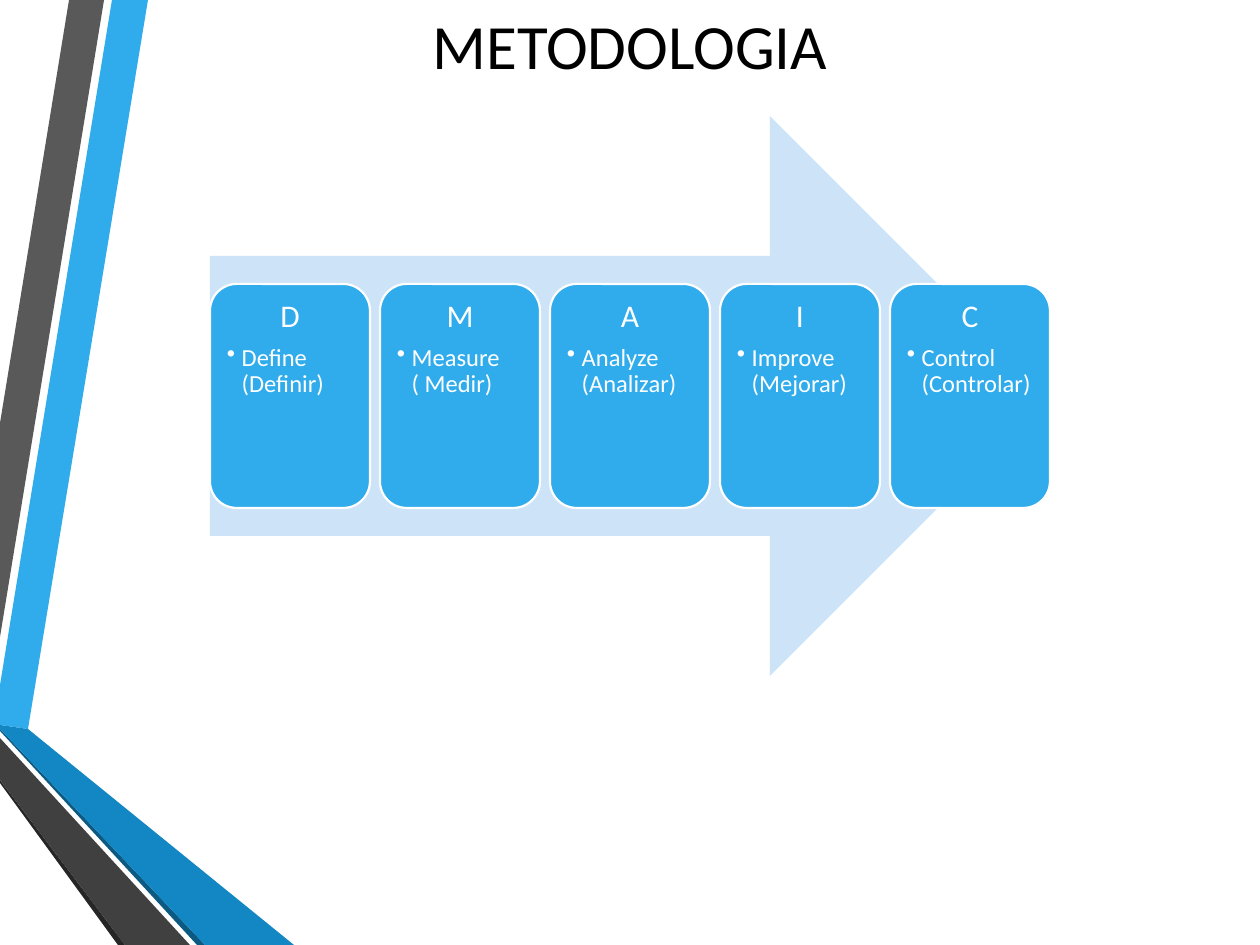
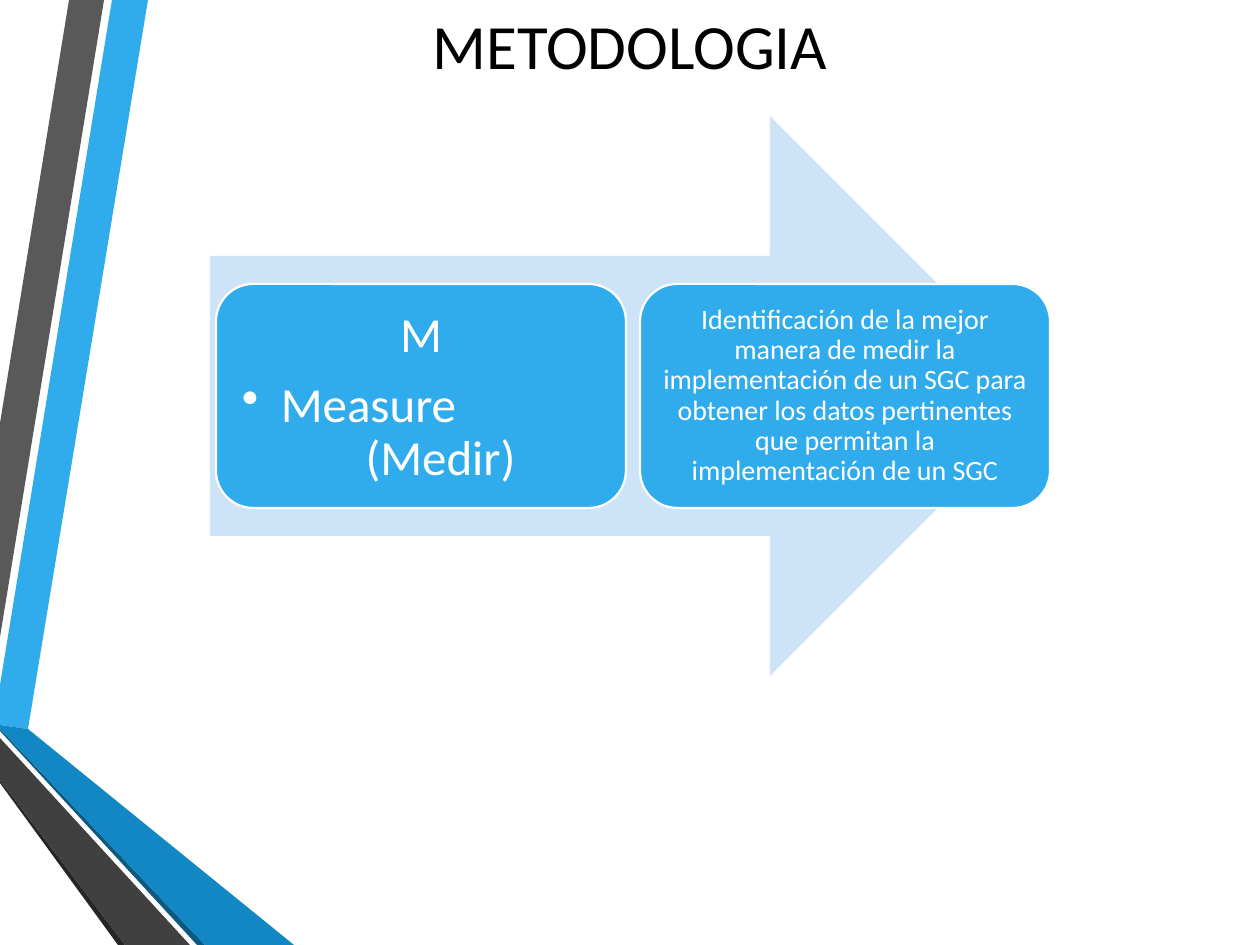
import pptx
import pptx.dml.color
import pptx.enum.shapes
import pptx.enum.text
import pptx.oxml.ns
import pptx.util
from lxml import etree

PX = pptx.util.Inches(1) / 126
FONT = "Calibri"
COLORS = {
    "black": "000000",
    "white": "FFFFFF",
    "sky": "30ACEC",
    "blue": "1287C3",
    "navy": "0C5A82",
    "gray": "595959",
    "charcoal": "404040",
    "ink": "262626",
    "pale": "CDE3F8",
}
BANDS = [
    ("sky", [(0, 685), (0, 725), (28, 729), (148, 0), (112, 0)]),
    ("gray", [(104, 0), (69, 0), (0, 423), (0, 637)]),
    ("ink", [(0, 780), (0, 783), (118, 945), (125, 945)]),
    ("navy", [(0, 729), (0, 731), (197, 945), (205, 945)]),
    ("blue", [(0, 729), (205, 945), (294, 945), (28, 729), (0, 725)]),
    ("charcoal", [(0, 780), (125, 945), (190, 945), (0, 738)]),
]
TITLE_BOX = (174, 0, 912, 89)
ARROW_BOX = (210, 116, 840, 560)
ALIGN = pptx.enum.text.PP_ALIGN
ANCHOR = pptx.enum.text.MSO_ANCHOR
SHAPE = pptx.enum.shapes.MSO_SHAPE
STEPS = [
    ("D", "Define (Definir)"),
    ("M", "Measure\v( Medir)"),
    ("A", "Analyze (Analizar)"),
    ("I", "Improve (Mejorar)"),
    ("C", "Control (Controlar)"),
]
GOAL = (
    "Identificación de la mejor manera de medir la implementación de un SGC "
    "para obtener los datos pertinentes que permitan la implementación de un SGC"
)


def emu(length):
    """Turn px into EMU."""
    return pptx.util.Emu(round(length * PX))


def rgb(name):
    """Look up a named colour."""
    return pptx.dml.color.RGBColor.from_string(COLORS[name])


def paint(shape, fill, line=None):
    """Give a shape a flat fill and an optional outline."""
    shape.shadow.inherit = False
    shape.fill.solid()
    shape.fill.fore_color.rgb = rgb(fill)
    if line:
        shape.line.color.rgb = rgb(line)
        shape.line.width = pptx.util.Pt(1.25)
    else:
        shape.line.fill.background()


def write(shape, text, size, color="white", align=ALIGN.CENTER, spacing=0.9,
          after=0, level=0, indent=0, bullet=False):
    """Add one formatted paragraph to a shape."""
    frame = shape.text_frame
    para = frame.paragraphs[0]
    if para.runs:
        para = frame.add_paragraph()
    para.text = text
    para.alignment = align
    para.level = level
    para.line_spacing = spacing
    para.space_before = pptx.util.Pt(0)
    para.space_after = pptx.util.Pt(after)
    for span in para.runs:
        span.font.name = FONT
        span.font.size = pptx.util.Pt(size)
        span.font.color.rgb = rgb(color)
    qn = pptx.oxml.ns.qn
    for line_break in para._p.findall(qn("a:br")):
        etree.SubElement(line_break, qn("a:rPr"), sz=str(size * 100))
    properties = para._p.get_or_add_pPr()
    if indent:
        properties.set("marL", str(emu(indent)))
        properties.set("indent", str(-emu(indent) if bullet else 0))
    if bullet:
        etree.SubElement(properties, qn("a:buChar"), char="•")


def draw_bands(page):
    """Draw the folded ribbons along the left edge."""
    for color, points in BANDS:
        builder = page.shapes.build_freeform(*points[0], scale=PX)
        builder.add_line_segments(points[1:], close=True)
        paint(builder.convert_to_shape(), color)


def draw_title(page, box, text):
    """Place and format the title placeholder."""
    title = page.shapes.title
    title.left, title.top, title.width, title.height = map(emu, box)
    title.text_frame.word_wrap = True
    title.text_frame.vertical_anchor = ANCHOR.TOP
    write(title, text, 36, color="black", spacing=1.0)


def draw_arrow(page, box, count, card_width, gap, inset):
    """Draw the arrow and its row of cards, flush right; return the cards."""
    left, top, width, height = box
    arrow = page.shapes.add_shape(SHAPE.RIGHT_ARROW, *map(emu, box))
    paint(arrow, "pale")
    first = left + width - count * card_width - (count - 1) * gap
    cards = []
    for index in range(count):
        card_box = (first + index * (card_width + gap), top + height * 0.3,
                    card_width, height * 0.4)
        card = page.shapes.add_shape(SHAPE.ROUNDED_RECTANGLE, *map(emu, card_box))
        paint(card, "sky", line="white")
        frame = card.text_frame
        frame.word_wrap = True
        frame.vertical_anchor = ANCHOR.TOP
        frame.margin_left = frame.margin_right = emu(inset)
        frame.margin_top = frame.margin_bottom = emu(inset)
        cards.append(card)
    return cards


def start_page(deck):
    """Add a page with the shared bands and title."""
    page = deck.slides.add_slide(deck.slide_layouts[5])
    draw_bands(page)
    draw_title(page, TITLE_BOX, "METODOLOGIA")
    return page


def build_steps(deck):
    """Build the page with the five steps."""
    page = start_page(deck)
    cards = draw_arrow(page, ARROW_BOX, len(STEPS), card_width=160, gap=10, inset=9)
    for card, (letter, term) in zip(cards, STEPS):
        write(card, letter, 18, after=6)
        write(card, term, 14, align=ALIGN.LEFT, level=1, indent=15, bullet=True)


def build_measure(deck):
    """Build the page on the measuring step."""
    page = start_page(deck)
    step, goal = draw_arrow(page, ARROW_BOX, 2, card_width=410, gap=14, inset=15)
    write(step, "M", 28, after=10)
    write(step, "Measure", 28, align=ALIGN.LEFT, level=1, indent=39, bullet=True)
    write(step, "(Medir)", 28, level=1, indent=39)
    goal.text_frame.margin_left = goal.text_frame.margin_right = emu(9)
    goal.text_frame.vertical_anchor = ANCHOR.MIDDLE
    write(goal, GOAL, 16)


def main():
    """Build and save the deck."""
    deck = pptx.Presentation()
    deck.slide_width, deck.slide_height = emu(1260), emu(945)
    build_steps(deck)
    build_measure(deck)
    deck.save("out.pptx")


if __name__ == "__main__":
    main()
